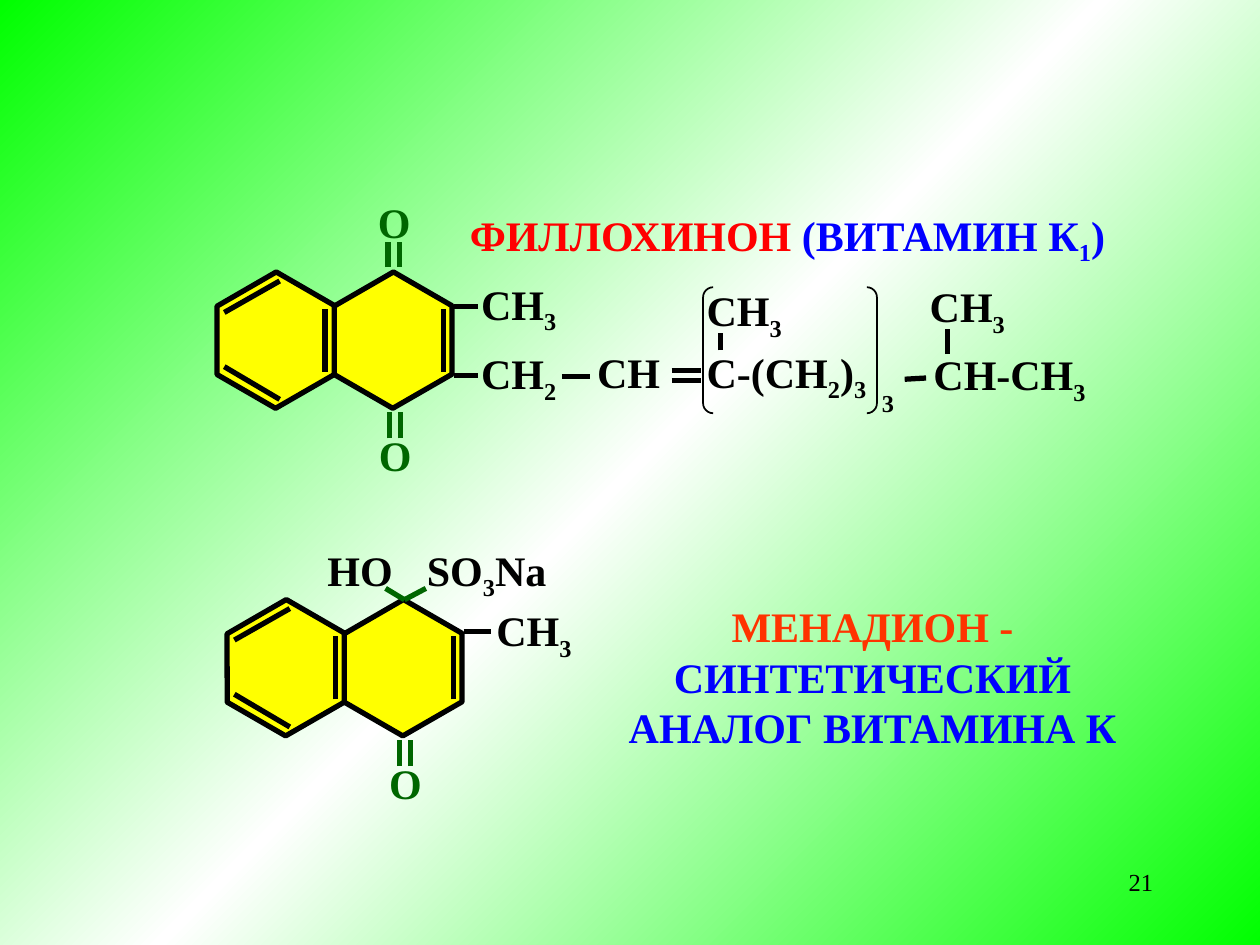
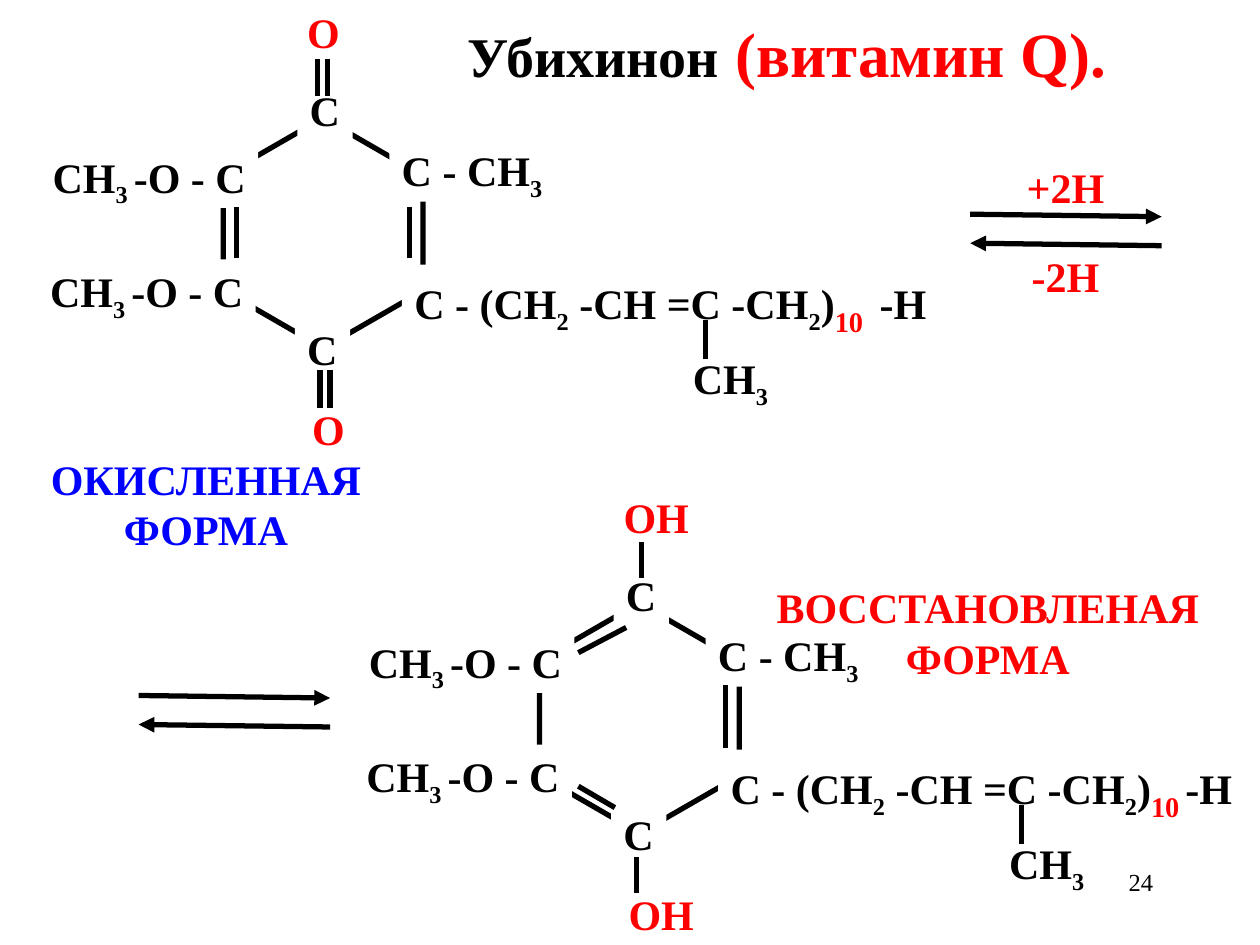
from copy import deepcopy
from dataclasses import dataclass

from lxml import etree
from pptx import Presentation
from pptx.dml.color import RGBColor
from pptx.enum.shapes import MSO_CONNECTOR, MSO_SHAPE
from pptx.enum.text import MSO_AUTO_SIZE, PP_ALIGN
from pptx.oxml.ns import qn
from pptx.util import Inches, Pt


@dataclass(frozen=True)
class Theme:
    font: str = "Times New Roman"
    black: str = "000000"
    white: str = "FFFFFF"
    red: str = "FF0000"
    orange: str = "FF3300"
    blue: str = "0000FF"
    yellow: str = "FFFF00"
    lime: str = "00FF00"
    green: str = "006600"
    body: int = 24
    index: int = 28
    name: int = 32
    title: int = 36
    page: int = 14
    bond: int = 3
    bracket: int = 1


T = Theme()


@dataclass
class Run:
    text: str
    color: str = T.black
    size: int = T.body
    sub: bool = False


def formula(text, color=T.black):
    """Turn text into runs; the parts between tildes are subscripts."""
    return [Run(part, color, sub=bool(i % 2))
            for i, part in enumerate(text.split("~")) if part]


def label(s, x, y, w, content, h=0.5, color=T.black, align=PP_ALIGN.LEFT,
          fill=None, wrap=False, bold=True):
    """Text box; content is a formula string (one paragraph a line) or runs."""
    if isinstance(content, str):
        paragraphs = [formula(line, color) for line in content.split("\n")]
    else:
        paragraphs = [content]
    sp = s.shapes.add_textbox(Inches(x), Inches(y), Inches(w), Inches(h))
    if fill:
        sp.fill.solid()
        sp.fill.fore_color.rgb = RGBColor.from_string(fill)
    tf = sp.text_frame
    tf.word_wrap = wrap
    tf.auto_size = MSO_AUTO_SIZE.SHAPE_TO_FIT_TEXT
    for i, runs in enumerate(paragraphs):
        p = tf.add_paragraph() if i else tf.paragraphs[0]
        p.alignment = align
        for run in runs:
            r = p.add_run()
            r.text = run.text
            r.font.name = T.font
            r.font.size = Pt(run.size)
            r.font.bold = bold
            r.font.color.rgb = RGBColor.from_string(run.color)
            if run.sub:
                r._r.get_or_add_rPr().set("baseline", "-25000")


def bond(s, x1, y1, x2, y2, color=T.black, arrow=False):
    line = s.shapes.add_connector(MSO_CONNECTOR.STRAIGHT, Inches(x1), Inches(y1),
                                  Inches(x2), Inches(y2))
    line.line.width = Pt(T.bond)
    line.line.color.rgb = RGBColor.from_string(color)
    if arrow:
        etree.SubElement(line.line._get_or_add_ln(), qn("a:tailEnd"), type="triangle")
    etree.SubElement(line._element.spPr, qn("a:effectLst"))


def double_bond(s, x1, y1, x2, y2, dx=0.0, dy=0.0, color=T.black):
    """Two parallel bonds, the second shifted by dx, dy."""
    for k in (0, 1):
        bond(s, x1 + k * dx, y1 + k * dy, x2 + k * dx, y2 + k * dy, color)


def outline(s, kind, x, y, w, h, width, fill=None, adjustments=()):
    sp = s.shapes.add_shape(kind, Inches(x), Inches(y), Inches(w), Inches(h))
    sp.shadow.inherit = False
    for i, value in enumerate(adjustments):
        sp.adjustments[i] = value
    if fill:
        sp.fill.solid()
        sp.fill.fore_color.rgb = RGBColor.from_string(fill)
    else:
        sp.fill.background()
    sp.line.width = Pt(width)
    sp.line.color.rgb = RGBColor.from_string(T.black)
    return sp


def ring(s, x, y, w, h, fill=None):
    sp = outline(s, MSO_SHAPE.HEXAGON, x, y, w, h, T.bond, fill, (0.289, 1.1547))
    sp.rotation = 30


def page_number(s, number):
    label(s, 7.17, 6.83, 2.08, [Run(number, size=T.page)], align=PP_ALIGN.RIGHT,
          wrap=True, bold=False)


def diagonal_gradient(s):
    fill = s.background.fill
    fill.gradient()
    fill.gradient_angle = 315
    stops = s.element.find(".//" + qn("a:gsLst"))
    stops.append(deepcopy(stops[-1]))
    for i, (stop, color) in enumerate(zip(fill.gradient_stops, (T.lime, T.white, T.lime))):
        stop.position = i / 2
        stop.color.rgb = RGBColor.from_string(color)


def naphthoquinone(s, x, y, oxygen):
    """Fused yellow rings with the lower carbonyl group."""
    for dx in (0, 0.93):
        ring(s, x + dx, y, 1.08, 0.94, T.yellow)
    bond(s, x + 0.13, y + 0.25, x + 0.57, y)
    bond(s, x + 0.13, y + 0.68, x + 0.57, y + 0.94)
    for dx in (0.93, 1.87):
        bond(s, x + dx, y + 0.72, x + dx, y + 0.22)
    double_bond(s, x + 1.44, y + 1.25, x + 1.44, y + 1.04, dx=0.09, color=T.green)
    label(s, x + 1.26, y + 1.13, 0.46, oxygen, color=T.green)


def phylloquinone(s, x, y):
    naphthoquinone(s, x, y, "О")
    double_bond(s, x + 1.43, y - 0.11, x + 1.43, y - 0.31, dx=0.09, color=T.green)
    label(s, x + 1.25, y - 0.72, 0.46, "О", color=T.green)
    for dy, group in ((0.2, "СН~3~"), (0.75, "СН~2~")):
        bond(s, x + 1.95, y + dy, x + 2.14, y + dy)
        label(s, x + 2.07, y + dy - 0.27, 0.81, group)
    bond(s, x + 2.81, y + 0.76, x + 3.03, y + 0.76)
    label(s, x + 2.99, y + 0.47, 0.7, "СН")
    double_bond(s, x + 3.68, y + 0.71, x + 3.91, y + 0.71, dy=0.08)
    for kind, dx in ((MSO_SHAPE.LEFT_BRACKET, 3.93), (MSO_SHAPE.RIGHT_BRACKET, 5.23)):
        outline(s, kind, x + dx, y + 0.05, 0.08, 1, T.bracket, adjustments=(1,))
    label(s, x + 3.86, y + 0.47, 1.5, "С-(СН~2~)~3~")
    bond(s, x + 4.07, y + 0.55, x + 4.07, y + 0.41)
    label(s, x + 3.86, y - 0.02, 0.81, "СН~3~")
    label(s, x + 5.25, y + 0.58, 0.31, "~3~", h=0.37)
    bond(s, x + 5.53, y + 0.78, x + 5.7, y + 0.77)
    label(s, x + 5.66, y + 0.49, 1.42, "СН-СН~3~")
    bond(s, x + 5.87, y + 0.58, x + 5.87, y + 0.38)
    label(s, x + 5.63, y - 0.05, 0.81, "СН~3~")
    label(s, x + 1.98, y - 0.62, 5.35,
          [Run("ФИЛЛОХИНОН", T.red)] + formula(" (ВИТАМИН К~1~)", T.blue))


def menadione_bisulfite(s, x, y):
    naphthoquinone(s, x, y, "O")
    for dx in (1.65, 1.33):
        bond(s, x + 1.48, y - 0.07, x + dx, y - 0.16, T.green)
    label(s, x + 1.56, y - 0.56, 1.16, "SO~3~Na")
    label(s, x + 0.77, y - 0.56, 0.72, "HO")
    bond(s, x + 1.95, y + 0.18, x + 2.17, y + 0.18)
    label(s, x + 2.11, y - 0.08, 0.81, "CH~3~")
    label(s, x + 2.95, y - 0.11, 4.49,
          [Run("МЕНАДИОН - ", T.orange), Run("СИНТЕТИЧЕСКИЙ АНАЛОГ ВИТАМИНА К", T.blue)],
          h=1.3, align=PP_ALIGN.CENTER, wrap=True)


def benzoquinone(s, x, y, ending, tail_width):
    """Six-membered ring with its carbons and side chains."""
    ring(s, x, y, 1.83, 1.58)
    tail = (formula("С - (СН~2~ -СН =С -СН~2~)")
            + [Run("10", T.red, T.index, sub=True)] + formula("~ ~" + ending))
    for dx, dy, w, content, align in (
            (1.44, 0.04, 1.33, "С - СН~3~", PP_ALIGN.LEFT),
            (1.54, 1.04, tail_width, tail, PP_ALIGN.LEFT),
            (0.69, 1.46, 0.44, "С", PP_ALIGN.LEFT),
            (-1.36, 0.09, 1.76, "СН~3 ~-О - С", PP_ALIGN.RIGHT),
            (0.71, -0.44, 0.44, "С", PP_ALIGN.LEFT),
            (-1.38, 1, 1.76, "СН~3 ~-О - С", PP_ALIGN.RIGHT)):
        label(s, x + dx, y + dy, w, content, align=align, fill=T.white)
    bond(s, x + 3.95, y + 1.48, x + 3.95, y + 1.79)
    label(s, x + 3.75, y + 1.69, 0.81, "СН~3~")


def oxidized_form(s, x, y):
    benzoquinone(s, x, y, " -Н", 4.34)
    double_bond(s, x + 0.87, y - 0.59, x + 0.87, y - 0.3, dx=0.08)
    double_bond(s, x + 0.89, y + 1.88, x + 0.89, y + 2.18, dx=0.08)
    label(s, x + 0.69, y - 1.06, 0.46, "О", color=T.red)
    label(s, x + 0.73, y + 2.09, 0.46, "О", color=T.red)
    for dx in (0.23, 1.6):
        bond(s, x + dx, y + 0.58, x + dx, y + 0.99)
    label(s, x - 1.35, y + 2.49, 2.67, "ОКИСЛЕННАЯ\nФОРМА", h=0.9, color=T.blue,
          align=PP_ALIGN.CENTER)


def reduced_form(s, x, y):
    benzoquinone(s, x, y, "-Н", 4.26)
    bond(s, x + 0.89, y + 1.89, x + 0.89, y + 2.18)
    bond(s, x + 0.93, y - 0.61, x + 0.93, y - 0.32)
    label(s, x + 0.69, y - 1.06, 0.72, "ОН", color=T.red)
    label(s, x + 0.73, y + 2.09, 0.72, "ОН", color=T.red)
    bond(s, x + 0.43, y + 0.27, x + 0.81, y + 0.07)
    bond(s, x + 0.43, y + 1.33, x + 0.72, y + 1.5)
    bond(s, x + 1.6, y + 0.53, x + 1.6, y + 1.03)
    label(s, x + 1.89, y - 0.34, 3.58, "ВОССТАНОВЛЕНАЯ\nФОРМА", h=0.9, color=T.red,
          align=PP_ALIGN.CENTER)


def equilibrium_arrows(s, x, y):
    bond(s, x, y, x + 1.52, y + 0.02, arrow=True)
    bond(s, x + 1.52, y + 0.25, x, y + 0.23, arrow=True)


def vitamin_k_slide(s):
    diagonal_gradient(s)
    page_number(s, "21")
    phylloquinone(s, 1.65, 2.23)
    menadione_bisulfite(s, 1.73, 4.83)


def ubiquinone_slide(s):
    page_number(s, "24")
    label(s, 3.61, 0.07, 5.6,
          [Run("Убихинон", size=T.name), Run(" ", size=T.title),
           Run("(витамин Q).", T.red, T.title)], h=0.7, wrap=True)
    reduced_form(s, 4.16, 4.91)
    equilibrium_arrows(s, 1.1, 5.52)
    oxidized_form(s, 1.65, 1.06)
    equilibrium_arrows(s, 7.7, 1.7)
    label(s, 8.05, 1.23, 0.82, "+2Н", color=T.red)
    label(s, 8.09, 1.94, 0.74, "-2Н", color=T.red)


def main():
    prs = Presentation()
    prs.slide_width, prs.slide_height = Inches(10), Inches(7.5)
    for build in (vitamin_k_slide, ubiquinone_slide):
        build(prs.slides.add_slide(prs.slide_layouts[6]))
    prs.save("out.pptx")


if __name__ == "__main__":
    main()
